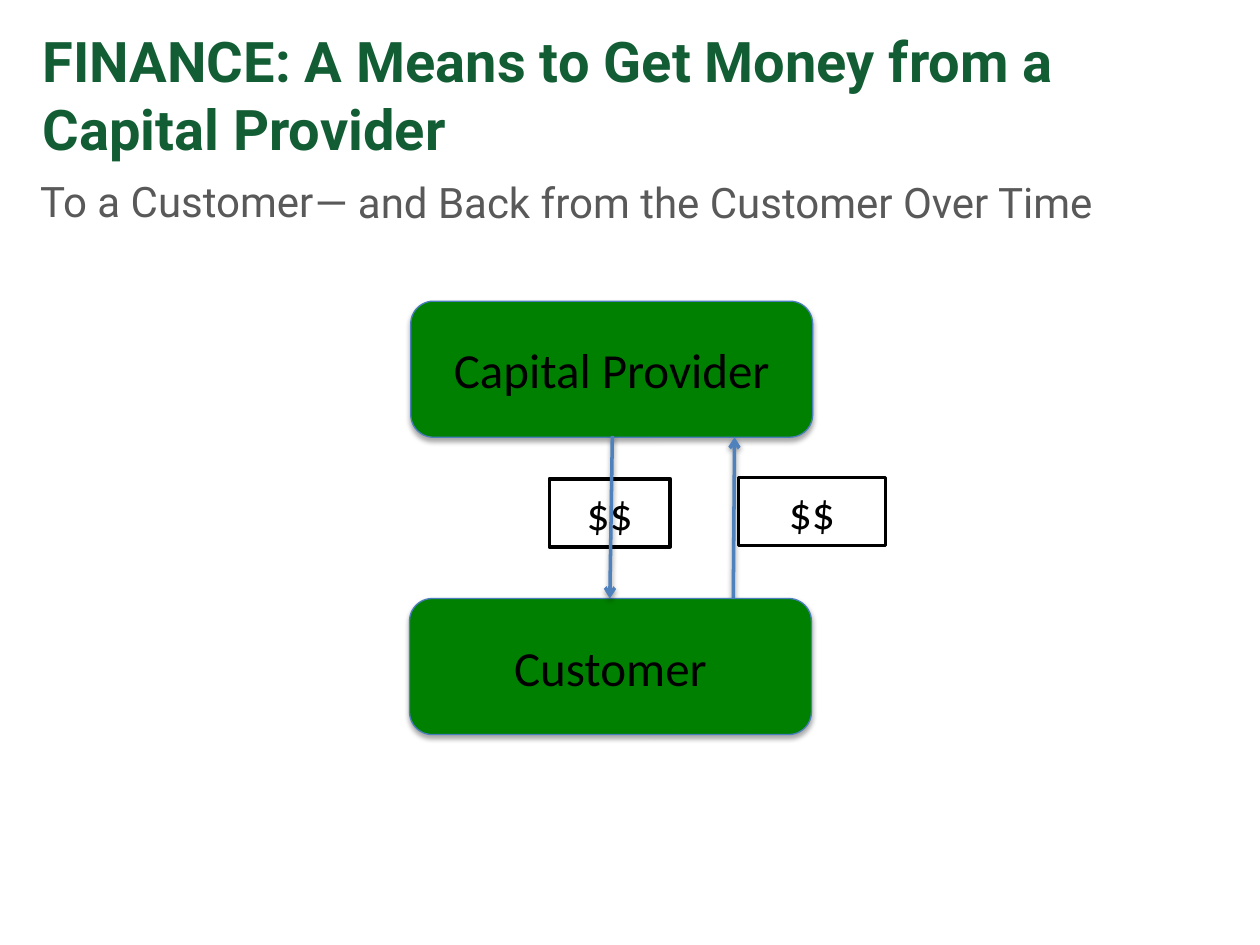
from lxml import etree
from pptx import Presentation
from pptx.dml.color import RGBColor
from pptx.enum.shapes import MSO_CONNECTOR, MSO_SHAPE
from pptx.enum.text import MSO_ANCHOR as Anchor, PP_ALIGN as Align
from pptx.oxml.ns import qn
from pptx.util import Inches, Pt

TITLE_GREEN = RGBColor(0x13, 0x5D, 0x34)
BOX_GREEN = RGBColor(0x00, 0x80, 0x00)
BOX_EDGE = RGBColor(0x4B, 0x7E, 0xBC)
ARROW_BLUE = RGBColor(0x4F, 0x81, 0xBD)
GREY = RGBColor(0x59, 0x59, 0x59)
BLACK = RGBColor(0x00, 0x00, 0x00)
WHITE = RGBColor(0xFF, 0xFF, 0xFF)


class FlowSlide:
    heading_font = "Roboto"
    diagram_font = "Calibri"

    def __init__(self, slide):
        self.slide = slide

    def set_text(self, shape, text, font_name, size, color, anchor, align, bold=False):
        frame = shape.text_frame
        frame.word_wrap = True
        frame.vertical_anchor = anchor
        frame.text = text
        paragraph = frame.paragraphs[0]
        paragraph.alignment = align
        font = paragraph.runs[0].font
        font.name, font.size, font.bold = font_name, Pt(size), bold
        font.color.rgb = color

    def cast_shadow(self, properties, opacity, blur, distance):
        """Add a downward black shadow; blur and distance are in points."""
        effects = properties.find(qn("a:effectLst"))
        if effects is None:
            effects = etree.SubElement(properties, qn("a:effectLst"))
        shadow = etree.SubElement(
            effects, qn("a:outerShdw"), blurRad=str(Pt(blur)), dist=str(Pt(distance)),
            dir="5400000", rotWithShape="0")
        tint = etree.SubElement(shadow, qn("a:srgbClr"), val=str(BLACK))
        etree.SubElement(tint, qn("a:alpha"), val=str(opacity * 1000))

    def heading(self, text, left, top, width, height, size, color, anchor, bold=False):
        box = self.slide.shapes.add_textbox(
            Inches(left), Inches(top), Inches(width), Inches(height))
        self.set_text(box, text, self.heading_font, size, color, anchor, Align.LEFT, bold)

    def block(self, kind, text, left, top, width, height, fill, edge, edge_width, size, anchor):
        shape = self.slide.shapes.add_shape(
            kind, Inches(left), Inches(top), Inches(width), Inches(height))
        shape.shadow.inherit = False
        shape.fill.solid()
        shape.fill.fore_color.rgb = fill
        shape.line.color.rgb = edge
        shape.line.width = Pt(edge_width)
        self.set_text(shape, text, self.diagram_font, size, BLACK, anchor, Align.CENTER)
        return shape

    def party(self, text, left, top):
        shape = self.block(MSO_SHAPE.ROUNDED_RECTANGLE, text, left, top, 3.19, 1.08,
                           BOX_GREEN, BOX_EDGE, 0.75, 28, Anchor.MIDDLE)
        self.cast_shadow(shape.element.spPr, 35, 3.1, 1.8)

    def money(self, left, top, width):
        self.block(MSO_SHAPE.RECTANGLE, "$$", left, top, width, 0.54,
                   WHITE, BLACK, 2, 26, Anchor.TOP)

    def arrow(self, x1, y1, x2, y2):
        arrow = self.slide.shapes.add_connector(
            MSO_CONNECTOR.STRAIGHT, Inches(x1), Inches(y1), Inches(x2), Inches(y2))
        arrow.line.color.rgb = ARROW_BLUE
        arrow.line.width = Pt(2)
        properties = arrow.element.spPr
        etree.SubElement(properties.find(qn("a:ln")), qn("a:tailEnd"), type="arrow")
        self.cast_shadow(properties, 38, 3.1, 1.6)


def main():
    deck = Presentation()
    deck.slide_width, deck.slide_height = Inches(10), Inches(7.5)
    flow = FlowSlide(deck.slides.add_slide(deck.slide_layouts[6]))

    flow.heading("FINANCE: A Means to Get Money from a Capital Provider",
                 0.24, 0.34, 8.23, 0.99, 32, TITLE_GREEN, Anchor.BOTTOM, bold=True)
    flow.party("Capital Provider", 3.26, 2.39)
    flow.heading("— and Back from the Customer Over Time",
                 2.4, 1.35, 7.03, 0.5, 24, GREY, Anchor.TOP)

    # Repayment: customer to capital provider
    flow.arrow(5.82, 4.75, 5.83, 3.47)
    flow.money(5.86, 3.79, 1.17)

    # Funding: capital provider to customer
    flow.party("Customer", 3.25, 4.75)
    flow.money(4.36, 3.8, 0.96)
    flow.arrow(4.86, 3.46, 4.84, 4.75)
    flow.heading("To a Customer", 0.22, 1.15, 2.64, 0.89, 24, GREY, Anchor.MIDDLE)

    deck.save("out.pptx")


if __name__ == "__main__":
    main()
